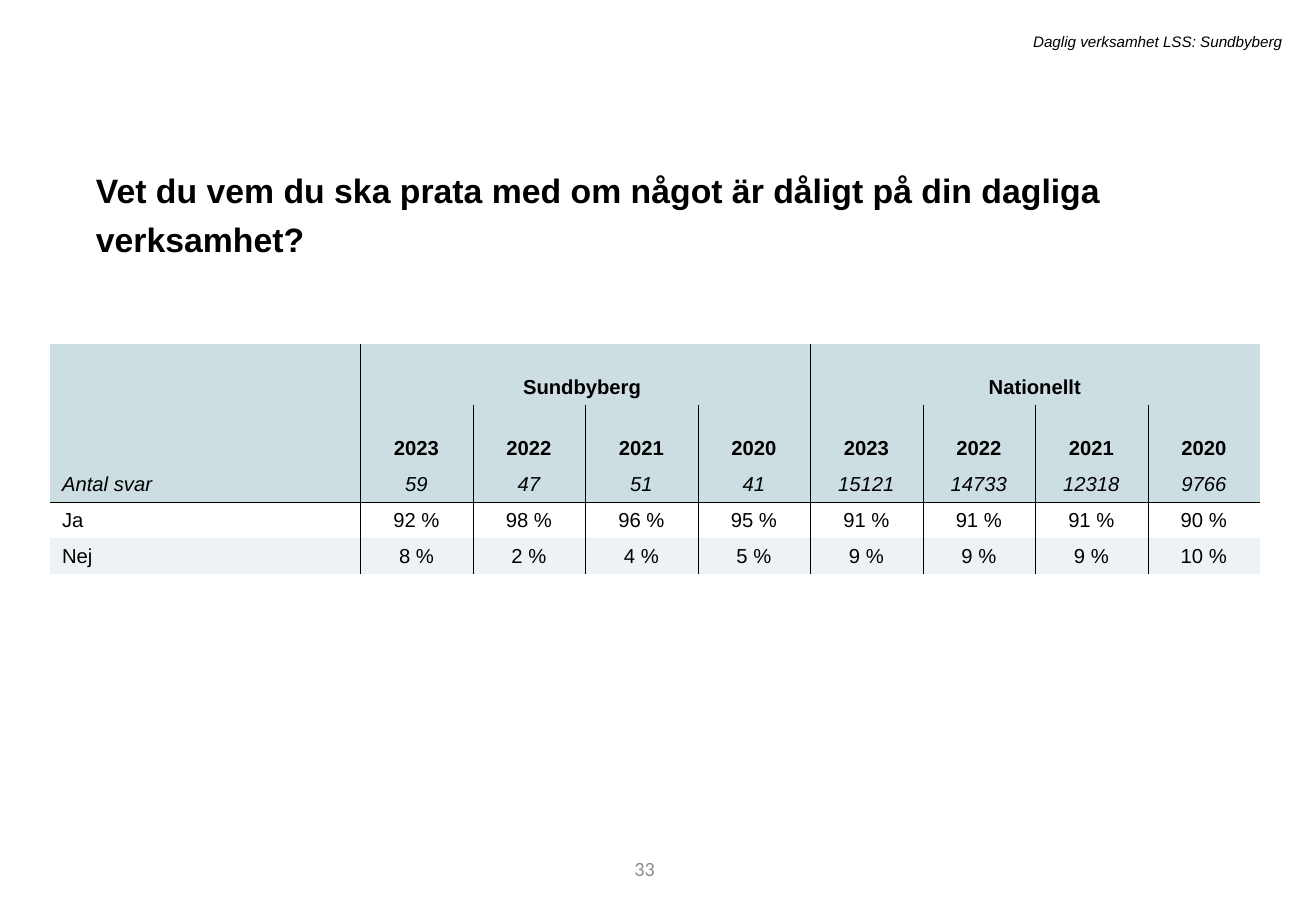
"""Build the survey table slide on whom to talk to at the daily activity."""
from dataclasses import dataclass

from lxml import etree
from pptx import Presentation
from pptx.dml.color import RGBColor
from pptx.enum.text import MSO_ANCHOR, MSO_AUTO_SIZE, PP_ALIGN
from pptx.oxml.ns import qn
from pptx.util import Pt

PX = 7526
LEFT, MID, RIGHT = PP_ALIGN.LEFT, PP_ALIGN.CENTER, PP_ALIGN.RIGHT
TOP, MIDDLE, BOTTOM = MSO_ANCHOR.TOP, MSO_ANCHOR.MIDDLE, MSO_ANCHOR.BOTTOM
GROW, FIXED = MSO_AUTO_SIZE.SHAPE_TO_FIT_TEXT, MSO_AUTO_SIZE.NONE
COLORS = {"ink": "000000", "grey": "8C8C8C", "head": "CCDEE1",
          "white": "FFFFFF", "band": "EDF3F4"}
YEARS = ["2023", "2022", "2021", "2020"]
SPAN = len(YEARS)
GROUPS = ["Sundbyberg ", "Nationellt"]


@dataclass
class Label:
    text: str
    box: tuple[int, int, int, int]
    style: dict
    fit: MSO_AUTO_SIZE = GROW
    anchor: MSO_ANCHOR = TOP


@dataclass
class Row:
    cells: list[str]
    fill: str
    height: int = 36
    bold: bool = False
    slant: bool = False
    anchor: MSO_ANCHOR = MIDDLE


LABELS = [
    Label("33", (371, 844, 296, 49),
          {"size": 12, "font": "Calibri", "color": "grey", "align": RIGHT},
          FIXED, MIDDLE),
    Label("Vet du vem du ska prata med om något är dåligt på din dagliga verksamhet?",
          (84, 156, 1142, 57),
          {"size": 20, "bold": True, "leading": 1.2, "before": 10}),
    Label("Daglig verksamhet LSS: Sundbyberg", (217, 26, 1077, 30),
          {"size": 9, "slant": True, "align": RIGHT}),
]
HEADS = [""] + [text for group in GROUPS for text in [group] + [""] * (SPAN - 1)]
ROWS = [
    Row(HEADS, "head", 61, bold=True, anchor=BOTTOM),
    Row([""] + YEARS * len(GROUPS), "head", 61, bold=True, anchor=BOTTOM),
    Row(["Antal svar", "59", "47", "51", "41",
         "15121", "14733", "12318", "9766"], "head", slant=True),
    Row(["Ja", "92 %", "98 %", "96 %", "95 %",
         "91 %", "91 %", "91 %", "90 %"], "white"),
    Row(["Nej", "8 %", "2 %", "4 %", "5 %",
         "9 %", "9 %", "9 %", "10 %"], "band"),
]
COLS = len(HEADS)
RULE = 2


def put(frame, text: str, *, size: int = 12, font: str = "Arial",
        color: str = "ink", bold: bool = False, slant: bool = False,
        align: PP_ALIGN = LEFT, leading: float = 1.0, before: int = 0) -> None:
    para = frame.paragraphs[0]
    para.alignment = align
    para.line_spacing = leading
    para.space_before = Pt(before)
    para.font.size = Pt(size)
    if not text:
        return
    run = para.add_run()
    run.text = text
    face = run.font
    face.size, face.name, face.bold, face.italic = Pt(size), font, bold, slant
    face.color.rgb = RGBColor.from_string(COLORS[color])


def add_label(slide, label: Label) -> None:
    box = slide.shapes.add_textbox(*(n * PX for n in label.box))
    frame = box.text_frame
    frame.word_wrap = True
    frame.auto_size = label.fit
    frame.vertical_anchor = label.anchor
    put(frame, label.text, **label.style)


def edge(cell, sides: str) -> None:
    props = cell._tc.get_or_add_tcPr()
    for side in "LRTB":
        line = etree.SubElement(props, qn(f"a:ln{side}"), w=str(Pt(0.25)))
        if side in sides:
            fill = etree.SubElement(line, qn("a:solidFill"))
            etree.SubElement(fill, qn("a:srgbClr"), val=COLORS["ink"])
        else:
            etree.SubElement(line, qn("a:noFill"))


def sides_at(row: int, col: int) -> str:
    split = SPAN if row == 0 else 1
    left = "L" if col and (col - 1) % split == 0 else ""
    right = "R" if col % split == 0 and (col < COLS - 1 or row == 0) else ""
    top = "T" if row == RULE + 1 else ""
    base = "B" if row == RULE else ""
    return left + right + top + base


def add_grid(slide) -> None:
    high = sum(row.height for row in ROWS)
    frame = slide.shapes.add_table(len(ROWS), COLS, 50 * PX, 344 * PX,
                                   1210 * PX, high * PX)
    table = frame.table
    table.first_row = table.horz_banding = False
    for col in range(COLS):
        table.columns[col].width = (112 + col % 2 if col else 310) * PX
    for r, row in enumerate(ROWS):
        table.rows[r].height = row.height * PX
        for c, text in enumerate(row.cells):
            cell = table.cell(r, c)
            edge(cell, sides_at(r, c))
            cell.fill.solid()
            cell.fill.fore_color.rgb = RGBColor.from_string(COLORS[row.fill])
            cell.vertical_anchor = row.anchor
            put(cell.text_frame, text, bold=row.bold, slant=row.slant,
                align=MID if c else LEFT)
    for start in range(1, COLS, SPAN):
        table.cell(0, start).merge(table.cell(0, start + SPAN - 1))


def main() -> None:
    deck = Presentation()
    deck.slide_width, deck.slide_height = 1316 * PX, 911 * PX
    slide = deck.slides.add_slide(deck.slide_layouts[6])
    add_grid(slide)
    for label in LABELS:
        add_label(slide, label)
    deck.save("out.pptx")


if __name__ == "__main__":
    main()
